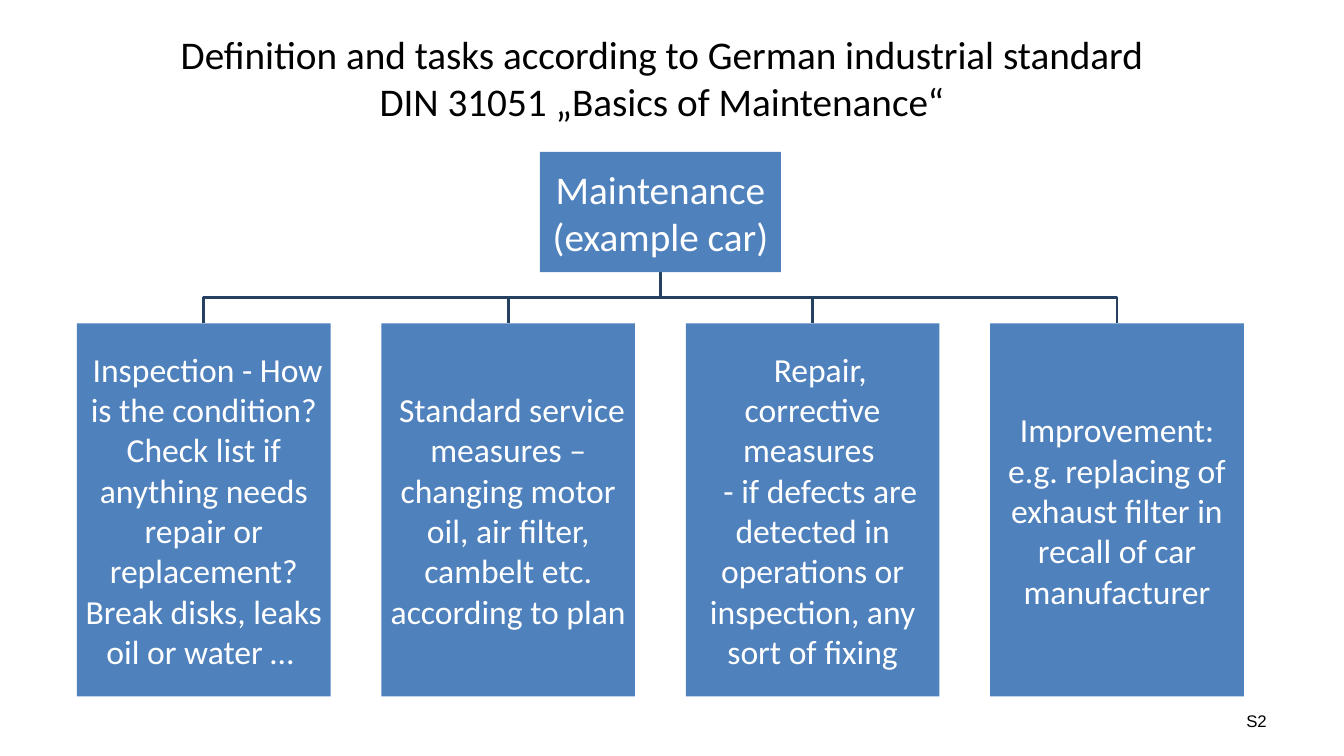
from dataclasses import dataclass

from pptx import Presentation
from pptx.dml.color import RGBColor
from pptx.enum.shapes import MSO_SHAPE
from pptx.enum.text import MSO_ANCHOR, PP_ALIGN
from pptx.util import Pt

RECT = MSO_SHAPE.RECTANGLE
MIDDLE, TOP = MSO_ANCHOR.MIDDLE, MSO_ANCHOR.TOP
CENTER, RIGHT = PP_ALIGN.CENTER, PP_ALIGN.RIGHT


@dataclass(frozen=True)
class Theme:
    ink: RGBColor = RGBColor(0x00, 0x00, 0x00)
    box: RGBColor = RGBColor(0x4F, 0x81, 0xBD)
    box_text: RGBColor = RGBColor(0xFF, 0xFF, 0xFF)
    branch: RGBColor = RGBColor(0x25, 0x40, 0x61)
    font: str = "Calibri"
    number_font: str = "Arial"
    title_size: int = 28
    task_size: int = 24
    number_size: int = 12
    branch_width: int = 2


THEME = Theme()

TITLE = [
    "Definition and tasks according to German industrial standard",
    "DIN 31051 „Basics of Maintenance“",
]
ROOT = ["Maintenance", "(example car)"]
TASKS = [
    ([" Inspection - How is the condition? Check list if anything needs "
      "repair or replacement? Break disks, leaks oil or water … "], 0),
    ([" Standard service measures – changing motor oil, air filter, "
      "cambelt etc. according to plan"], 0),
    (["Repair, corrective measures ",
      "- if defects are detected in operations or inspection, "
      "any sort of fixing"], 11),
    (["Improvement: e.g. replacing of exhaust filter in recall of car "
      "manufacturer"], 0),
]


def write(tf, lines, size, color, font=THEME.font, align=CENTER, anchor=MIDDLE,
          indent=0):
    tf.word_wrap = True
    tf.vertical_anchor = anchor
    for i, line in enumerate(lines):
        p = tf.paragraphs[0] if i == 0 else tf.add_paragraph()
        p.text = line
        p.alignment = align
        p.font.size = Pt(size)
        p.font.name = font
        p.font.color.rgb = color
        if indent:
            p._p.get_or_add_pPr().set("indent", str(Pt(indent)))


def add_label(s, box, lines, size, **style):
    tb = s.shapes.add_textbox(*map(Pt, box))
    write(tb.text_frame, lines, size, THEME.ink, **style)


def add_node(s, box, lines, size, indent=0):
    sp = s.shapes.add_shape(RECT, *map(Pt, box))
    sp.shadow.inherit = False
    sp.fill.solid()
    sp.fill.fore_color.rgb = THEME.box
    sp.line.fill.background()
    tf = sp.text_frame
    tf.margin_left = tf.margin_right = Pt(1.5)
    tf.margin_top = tf.margin_bottom = Pt(1.5)
    write(tf, lines, size, THEME.box_text, indent=indent)


def add_branch(s, x1, y1, x2, y2):
    mid = (y1 + y2) / 2
    fb = s.shapes.build_freeform(Pt(x1), Pt(y1))
    fb.add_line_segments(
        [(Pt(x), Pt(y)) for x, y in ((x1, mid), (x2, mid), (x2, y2))],
        close=False)
    sp = fb.convert_to_shape()
    sp.shadow.inherit = False
    sp.fill.background()
    sp.line.color.rgb = THEME.branch
    sp.line.width = Pt(THEME.branch_width)


def add_hierarchy(s, box, root_lines, tasks):
    left, top, width, height = box
    root_w, root_h, drop = 172, 86, 36.5
    gap_ratio = 0.2
    n = len(tasks)
    task_w = width / (n + (n - 1) * gap_ratio)
    step = task_w * (1 + gap_ratio)
    center = left + width / 2
    root_bottom = top + root_h
    task_top = root_bottom + drop
    task_h = height - root_h - drop
    lefts = [left + i * step for i in range(n)]
    for x in lefts:
        add_branch(s, center, root_bottom, x + task_w / 2, task_top)
    add_node(s, (center - root_w / 2, top, root_w, root_h), root_lines,
             THEME.title_size)
    for x, (lines, indent) in zip(lefts, tasks):
        add_node(s, (x, task_top, task_w, task_h), lines, THEME.task_size,
                 indent)


def main():
    prs = Presentation()
    prs.slide_width, prs.slide_height = Pt(960), Pt(540)
    s = prs.slides.add_slide(prs.slide_layouts[6])
    add_label(s, (688, 500.5, 224, 28.8), ["S2"], THEME.number_size,
              font=THEME.number_font, align=RIGHT)
    add_hierarchy(s, (55, 108.5, 833.5, 389), ROOT, TASKS)
    add_label(s, (119.5, 18, 706.5, 75), TITLE, THEME.title_size, anchor=TOP)
    prs.save("out.pptx")


if __name__ == "__main__":
    main()
